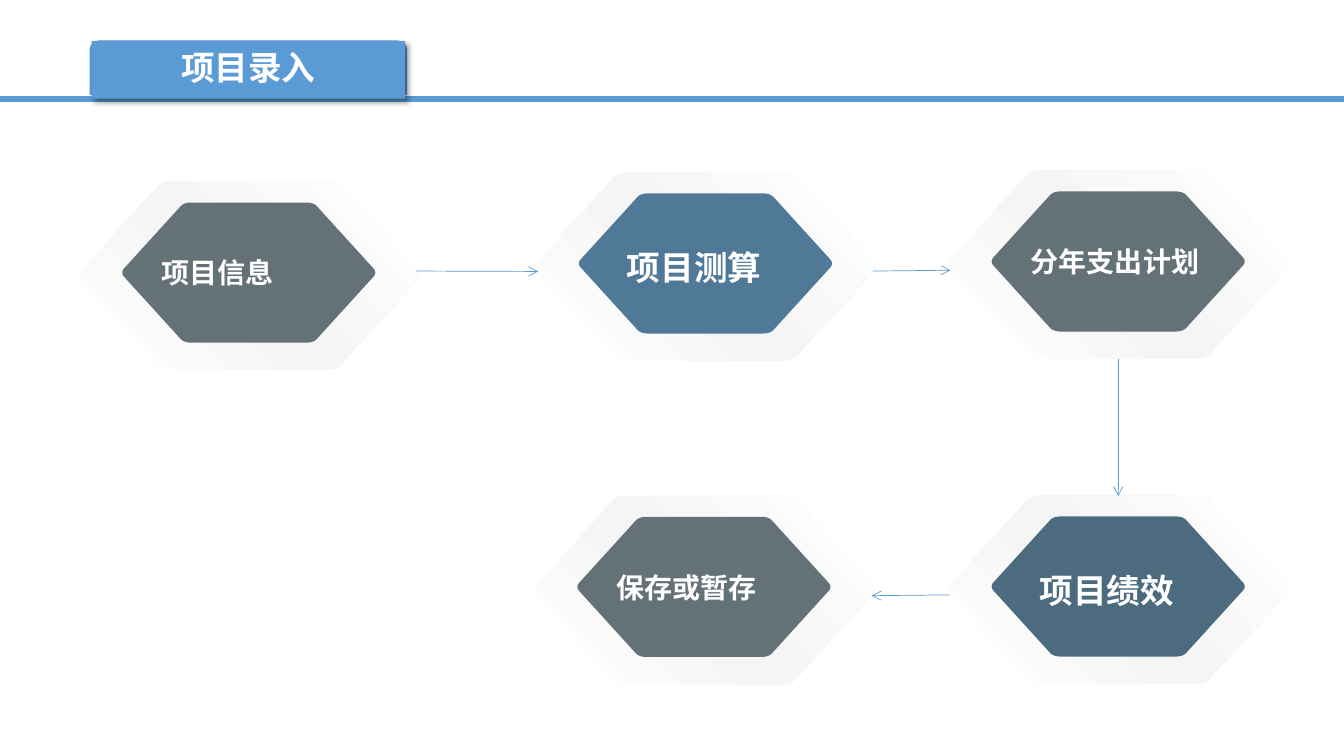
from typing import NamedTuple

from lxml.etree import SubElement
from pptx import Presentation
from pptx.dml.color import RGBColor
from pptx.enum.shapes import MSO_CONNECTOR, MSO_SHAPE
from pptx.enum.text import MSO_ANCHOR, MSO_AUTO_SIZE, PP_ALIGN
from pptx.oxml import parse_xml
from pptx.oxml.ns import nsdecls, qn
from pptx.util import Cm, Pt

FONT = "Noto Sans CJK SC"
COLORS = {
    "accent": "5B9BD5",
    "white": "FFFFFF",
    "rim": "F5F5F5",
    "gray": "647176",
    "blue": "507998",
    "teal": "4C6B7F",
    "shadow": "000000",
}
TIP_CURVE = [(0.985, -0.053), (1, -0.02), (1, 0.02), (0.985, 0.053)]
CORNER_CURVE = [(0.534, 0.952), (0.516, 0.984), (0.487, 1), (0.457, 1)]
CURVE_STEPS = 6
CORE_RISE = 0.08
LABEL_RISE = 0.63
LABEL_INDENT = {20: 2.45, 24: 2.23}


class Step(NamedTuple):
    label: str
    cx: float
    cy: float
    color: str
    size: int


class Arrow(NamedTuple):
    x1: float
    y1: float
    x2: float
    y2: float


STEPS = [
    Step("分年支出计划", 28.18, 6.67, "gray", 20),
    Step("项目绩效", 28.18, 14.86, "teal", 24),
    Step("项目测算", 17.78, 6.72, "blue", 24),
    Step("项目信息", 6.27, 6.95, "gray", 20),
    Step("保存或暂存", 17.74, 14.87, "gray", 20),
]
ARROWS = [
    Arrow(10.49, 6.83, 13.56, 6.84),
    Arrow(22, 6.83, 23.95, 6.81),
    Arrow(28.18, 9.04, 28.18, 12.5),
    Arrow(23.95, 14.99, 21.97, 15.01),
]


def rgb(name: str) -> RGBColor:
    return RGBColor.from_string(COLORS[name])


def bezier(controls: list) -> list:
    points = []
    for i in range(CURVE_STEPS + 1):
        t = i / CURVE_STEPS
        weights = ((1 - t) ** 3, 3 * t * (1 - t) ** 2, 3 * t * t * (1 - t), t ** 3)
        points.append(tuple(sum(w * c[axis] for w, c in zip(weights, controls))
                            for axis in (0, 1)))
    return points


def hexagon_outline() -> list:
    corner = bezier(CORNER_CURVE)
    right = [(x, -y) for x, y in reversed(corner)] + bezier(TIP_CURVE) + corner
    return right + [(-x, -y) for x, y in right]


def add_hexagon(shapes, cx: float, cy: float, w: float, h: float, color: str):
    points = [(int(Cm(cx + x * w / 2)), int(Cm(cy + y * h / 2)))
              for x, y in hexagon_outline()]
    builder = shapes.build_freeform(*points[0])
    builder.add_line_segments(points[1:], close=True)
    sp = builder.convert_to_shape()
    sp.shadow.inherit = False
    sp.fill.solid()
    sp.fill.fore_color.rgb = rgb(color)
    sp.line.fill.background()
    return sp


def shade_rim(sp) -> None:
    stops = "".join(
        f'<a:gs pos="{pos}"><a:srgbClr val="{COLORS[name]}"/></a:gs>'
        for pos, name in ((0, "white"), (47000, "rim"), (100000, "white")))
    gradient = parse_xml(
        f'<a:gradFill {nsdecls("a")} rotWithShape="1"><a:gsLst>{stops}</a:gsLst>'
        '<a:lin ang="18900000" scaled="0"/></a:gradFill>')
    spPr = sp._element.spPr
    spPr.replace(spPr.find(qn("a:solidFill")), gradient)


def set_text(p, text: str, size: int) -> None:
    p.add_run().text = text
    p.font.size = Pt(size)
    p.font.bold = True
    p.font.color.rgb = rgb("white")
    p.font.name = FONT
    SubElement(p._p.pPr.find(qn("a:defRPr")), qn("a:ea"), typeface=FONT)


def add_step(slide, step: Step) -> None:
    shapes = slide.shapes.add_group_shape().shapes
    add_hexagon(shapes, step.cx, step.cy, 8.66, 4.8, "white")
    shade_rim(add_hexagon(shapes, step.cx, step.cy, 8.59, 4.75, "rim"))
    add_hexagon(shapes, step.cx, step.cy - CORE_RISE, 6.4, 3.53, step.color)
    label = shapes.add_textbox(Cm(step.cx - LABEL_INDENT[step.size]),
                               Cm(step.cy - LABEL_RISE),
                               Cm(5.26), Cm(1.11 if step.size == 20 else 1.28))
    tf = label.text_frame
    tf.word_wrap = True
    tf.auto_size = MSO_AUTO_SIZE.SHAPE_TO_FIT_TEXT
    set_text(tf.paragraphs[0], step.label, step.size)


def add_line(slide, line: Arrow, width: float):
    cxn = slide.shapes.add_connector(MSO_CONNECTOR.STRAIGHT, Cm(line.x1), Cm(line.y1),
                                     Cm(line.x2), Cm(line.y2))
    cxn.line.color.rgb = rgb("accent")
    cxn.line.width = Pt(width)
    SubElement(cxn._element.spPr, qn("a:effectLst"))
    return cxn


def add_arrow(slide, arrow: Arrow) -> None:
    cxn = add_line(slide, arrow, 0.5)
    SubElement(cxn.line._get_or_add_ln(), qn("a:tailEnd"), type="arrow")


def add_tab(slide, kind, x: float, y: float, w: float, h: float):
    sp = slide.shapes.add_shape(kind, Cm(x), Cm(y), Cm(w), Cm(h))
    sp.shadow.inherit = False
    sp.fill.solid()
    sp.fill.fore_color.rgb = rgb("accent")
    sp.line.fill.background()
    return sp


def add_title(slide, text: str) -> None:
    add_line(slide, Arrow(0, 2.49, 33.87, 2.49), 4)
    add_tab(slide, MSO_SHAPE.ROUND_2_SAME_RECTANGLE, 2.26, 1.02, 8, 1.37)
    sp = add_tab(slide, MSO_SHAPE.RECTANGLE, 2.31, 1.04, 7.9, 1.45)
    effects = sp._element.spPr.find(qn("a:effectLst"))
    shadow = SubElement(effects, qn("a:outerShdw"), blurRad=str(Pt(4)), dist=str(Pt(3)),
                        dir="2700000", algn="tl", rotWithShape="0")
    color = SubElement(shadow, qn("a:srgbClr"), val=COLORS["shadow"])
    SubElement(color, qn("a:alpha"), val="40000")
    tf = sp.text_frame
    tf.word_wrap = True
    tf.vertical_anchor = MSO_ANCHOR.MIDDLE
    p = tf.paragraphs[0]
    p.alignment = PP_ALIGN.CENTER
    p.line_spacing = 0.9
    set_text(p, text, 24)


def main() -> None:
    prs = Presentation()
    prs.slide_width, prs.slide_height = Cm(33.87), Cm(19.05)
    slide = prs.slides.add_slide(prs.slide_layouts[6])
    add_title(slide, "项目录入")
    for step in STEPS:
        add_step(slide, step)
    for arrow in ARROWS:
        add_arrow(slide, arrow)
    prs.save("out.pptx")


if __name__ == "__main__":
    main()
